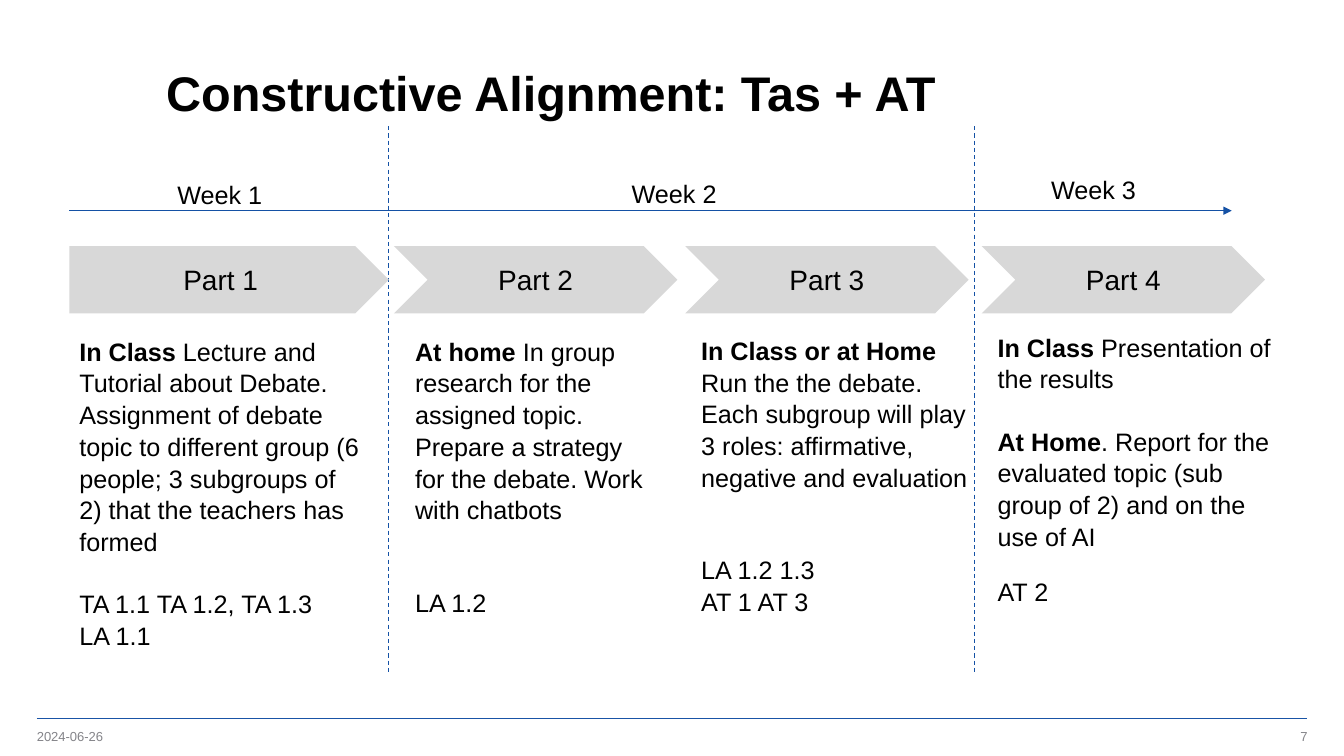
from lxml import etree
from pptx import Presentation
from pptx.dml.color import RGBColor
from pptx.enum.dml import MSO_LINE
from pptx.enum.shapes import MSO_CONNECTOR, MSO_SHAPE
from pptx.enum.text import MSO_ANCHOR, PP_ALIGN
from pptx.oxml.ns import qn
from pptx.util import Cm, Pt

STRAIGHT = MSO_CONNECTOR.STRAIGHT
DASH = MSO_LINE.DASH
PENTAGON, CHEVRON = MSO_SHAPE.PENTAGON, MSO_SHAPE.CHEVRON
TOP, MIDDLE = MSO_ANCHOR.TOP, MSO_ANCHOR.MIDDLE
LEFT, CENTER, RIGHT = PP_ALIGN.LEFT, PP_ALIGN.CENTER, PP_ALIGN.RIGHT

BLUE, RULE_BLUE, GRAY, FOOTER_GRAY, BLACK = "1451A5", "1954A6", "D8D8D8", "848489", "000000"
BODY_SPACING = 1.05
LINE_GAP = 21.7  # height of one body line in points

# Left, top and width of each part's text, then (space before, bold lead, text)
PARTS = [
    {"name": "Part 1", "shape": PENTAGON, "left": 1.75, "width": 8.05,
     "text_box": (1.75, 8.3, 7.62),
     "paragraphs": [
         (0, "In Class", " Lecture and Tutorial about Debate. Assignment of debate topic to "
                         "different group (6 people; 3 subgroups of 2) that the teachers has formed"),
         (LINE_GAP, "", "TA 1.1 TA 1.2, TA 1.3"),
         (0, "", "LA 1.1")]},
    {"name": "Part 2", "shape": CHEVRON, "left": 9.93, "width": 7.14,
     "text_box": (10.21, 8.3, 6.3),
     "paragraphs": [
         (0, "At home ", "In group research for the assigned topic. Prepare a strategy "
                         "for the debate. Work with chatbots"),
         (2 * LINE_GAP, "", "LA 1.2")]},
    {"name": "Part 3", "shape": CHEVRON, "left": 17.27, "width": 7.14,
     "text_box": (17.42, 8.28, 7.62),
     "paragraphs": [
         (0, "In Class or at Home ", "Run the the debate. Each subgroup will play 3 roles: "
                                     "affirmative, negative and evaluation"),
         (2 * LINE_GAP, "", "LA 1.2 1.3"),
         (0, "", "AT 1 AT 3")]},
    {"name": "Part 4", "shape": CHEVRON, "left": 24.74, "width": 7.14,
     "text_box": (24.89, 8.2, 7.62),
     "paragraphs": [
         (0, "In Class ", "Presentation of the results"),
         (LINE_GAP, "At Home", ". Report for the evaluated topic (sub group of 2) and on the use of AI"),
         (17, "", "AT 2")]},
]
WEEKS = [("Week 1", 4.22, 4.34), ("Week 2", 15.67, 4.32), ("Week 3", 26.24, 4.22)]


def color(hex_value):
    return RGBColor.from_string(hex_value)


def add_run(paragraph, text, size, hex_color=BLACK, bold=False):
    run = paragraph.add_run()
    run.text = text
    for name, value in {"name": "Arial", "size": Pt(size), "bold": bold}.items():
        setattr(run.font, name, value)
    run.font.color.rgb = color(hex_color)


def add_text_box(slide, box, anchor=TOP, margins=(0.25, 0.13)):
    shape = slide.shapes.add_textbox(*map(Cm, box))
    side, edge = map(Cm, margins)
    frame_format = {"word_wrap": True, "vertical_anchor": anchor,
                    "margin_left": side, "margin_right": side,
                    "margin_top": edge, "margin_bottom": edge}
    for name, value in frame_format.items():
        setattr(shape.text_frame, name, value)
    return shape.text_frame


def add_line(slide, start, end, hex_color, width, dash=None, arrow=False):
    connector = slide.shapes.add_connector(STRAIGHT, *map(Cm, start + end))
    connector.line.color.rgb = color(hex_color)
    connector.line.width = Pt(width)
    if dash:
        connector.line.dash_style = dash
    if arrow:
        etree.SubElement(connector.line._ln, qn("a:tailEnd"), type="triangle")
    etree.SubElement(connector._element.spPr, qn("a:effectLst"))


def add_title(slide, box):
    paragraph = add_text_box(slide, box, MIDDLE).paragraphs[0]
    paragraph.line_spacing = 1.18
    add_run(paragraph, "Constructive Alignment: Tas + AT", 34.7, bold=True)


def add_footer(slide, left, top, width):
    add_line(slide, (left, top), (left + width, top), RULE_BLUE, 1)
    label_width = 7.62
    labels = [("2024-06-26", left, LEFT), ("7", left + width - label_width, RIGHT)]
    for text, label_left, alignment in labels:
        box = (label_left, top + 0.23, label_width, 0.43)
        paragraph = add_text_box(slide, box, MIDDLE, (0, 0)).paragraphs[0]
        paragraph.alignment = alignment
        add_run(paragraph, text, 9.3, FOOTER_GRAY)


def add_timeline(slide, left, top, width):
    # Week axis, week dividers and week names
    add_line(slide, (left, top), (left + width, top), BLUE, 0.75, arrow=True)
    for divider in (9.8, 24.56):
        add_line(slide, (divider, top - 2.13), (divider, top + 11.63), BLUE, 0.75, DASH)
    for name, week_left, week_top in WEEKS:
        paragraph = add_text_box(slide, (week_left, week_top, 2.67, 1.02)).paragraphs[0]
        paragraph.line_spacing = BODY_SPACING
        add_run(paragraph, name, 18)


def add_part(slide, part, top, height):
    # Arrow with the part's name
    box = (part["left"], top, part["width"], height)
    shape = slide.shapes.add_shape(part["shape"], *map(Cm, box))
    shape.shadow.inherit = False
    shape.fill.solid()
    shape.fill.fore_color.rgb = color(GRAY)
    shape.line.fill.background()
    shape.text_frame.vertical_anchor = MIDDLE
    heading = shape.text_frame.paragraphs[0]
    heading.alignment = CENTER
    add_run(heading, part["name"], 20)

    # Activities below the arrow
    frame = add_text_box(slide, part["text_box"] + (7.5,))
    for index, (space_before, lead, text) in enumerate(part["paragraphs"]):
        paragraph = frame.add_paragraph() if index else frame.paragraphs[0]
        paragraph.line_spacing = BODY_SPACING
        if space_before:
            paragraph.space_before = Pt(space_before)
        if lead:
            add_run(paragraph, lead, 18, bold=True)
        add_run(paragraph, text, 18)


def main():
    presentation = Presentation()
    presentation.slide_width, presentation.slide_height = Cm(33.87), Cm(19.05)
    slide = presentation.slides.add_slide(presentation.slide_layouts[6])
    add_title(slide, (3.94, 0.94, 27.97, 2.49))
    add_footer(slide, 0.93, 18.11, 32.02)
    add_timeline(slide, 1.75, 5.31, 29.29)
    for part in PARTS:
        add_part(slide, part, 6.2, 1.7)
    presentation.save("out.pptx")


if __name__ == "__main__":
    main()
